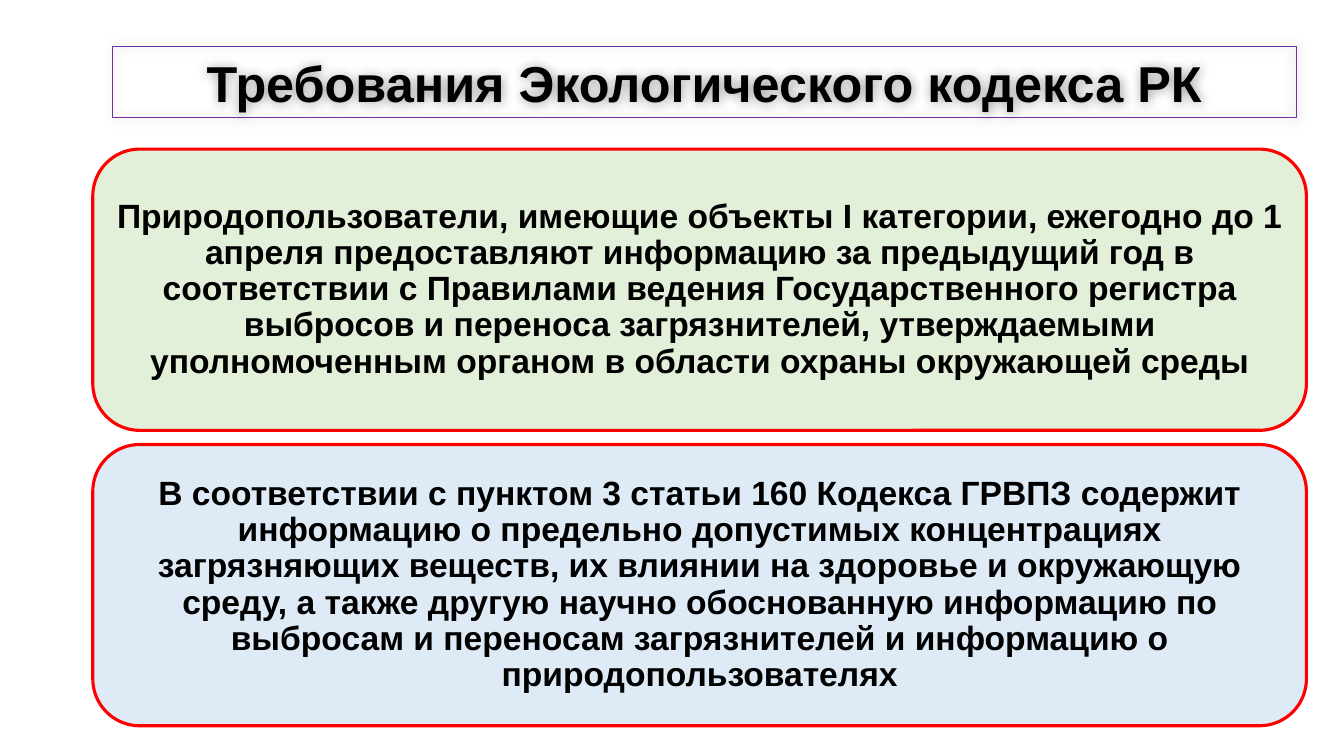
from lxml import etree
from pptx import Presentation
from pptx.dml.color import RGBColor
from pptx.enum.shapes import MSO_SHAPE as Shape
from pptx.enum.text import MSO_ANCHOR as Anchor, PP_ALIGN as Align
from pptx.oxml.ns import qn
from pptx.util import Pt

COLORS = {"text": "000000", "green": "E2F0D9", "blue": "DEEBF7",
          "red": "FF0000", "purple": "7030A0"}

TITLE = "Требования Экологического кодекса РК"
REQUIREMENTS = [
    ("green", "Природопользователи, имеющие объекты I категории, ежегодно до 1 апреля "
              "предоставляют информацию за предыдущий год в соответствии с Правилами "
              "ведения Государственного регистра выбросов и переноса загрязнителей, "
              "утверждаемыми уполномоченным органом в области охраны окружающей среды"),
    ("blue", "В соответствии с пунктом 3 статьи 160 Кодекса ГРВПЗ содержит информацию "
             "о предельно допустимых концентрациях загрязняющих веществ, их влиянии на "
             "здоровье и окружающую среду, а также другую научно обоснованную информацию "
             "по выбросам и переносам загрязнителей и информацию о природопользователях"),
]
PANEL_LEFT, PANEL_TOP, PANEL_WIDTH, PANEL_HEIGHT = 66.3, 106.5, 866.9, 200.9
PANEL_STEP = 211
PANEL_INSET = 9.8


class PageBuilder:
    def __init__(self, page, font="Arial"):
        self.page = page
        self.font = font

    def color(self, name):
        return RGBColor.from_string(COLORS[name])

    def outline(self, kind, left, top, width, height, line, weight, fill=None):
        box = self.page.shapes.add_shape(kind, Pt(left), Pt(top), Pt(width), Pt(height))
        box.shadow.inherit = False
        box.line.color.rgb = self.color(line)
        box.line.width = Pt(weight)
        if fill:
            box.fill.solid()
            box.fill.fore_color.rgb = self.color(fill)
        else:
            box.fill.background()
        return box

    def set_text(self, box, text, size):
        frame = box.text_frame
        frame.word_wrap = True
        frame.vertical_anchor = Anchor.MIDDLE
        para = frame.paragraphs[0]
        para.text = text
        para.alignment = Align.CENTER
        para.font.name = self.font
        para.font.size = Pt(size)
        para.font.bold = True
        para.font.color.rgb = self.color("text")
        return para

    def glow_shadow(self, box, blur, opacity):
        """Give the box a soft shadow centred on its outline."""
        effects = box.element.spPr.find(qn("a:effectLst"))
        shadow = etree.SubElement(effects, qn("a:outerShdw"), blurRad=str(Pt(blur)),
                                  dist="0", dir="0", algn="ctr", rotWithShape="0")
        tint = etree.SubElement(shadow, qn("a:srgbClr"), val=COLORS["text"])
        etree.SubElement(tint, qn("a:alpha"), val=str(opacity * 1000))

    def title(self, text, left, top, width, height):
        box = self.outline(Shape.RECTANGLE, left, top, width, height, "purple", 0.75)
        self.glow_shadow(box, blur=8, opacity=40)
        self.set_text(box, text, 36)

    def panel(self, text, fill, top):
        self.outline(Shape.ROUNDED_RECTANGLE, PANEL_LEFT, top, PANEL_WIDTH,
                     PANEL_HEIGHT, "red", 2.25, fill)
        box = self.page.shapes.add_textbox(
            Pt(PANEL_LEFT + PANEL_INSET), Pt(top + PANEL_INSET),
            Pt(PANEL_WIDTH - 2 * PANEL_INSET), Pt(PANEL_HEIGHT - 2 * PANEL_INSET))
        para = self.set_text(box, text, 24)
        para.line_spacing = 0.9
        para.space_after = Pt(8.4)
        frame = box.text_frame
        frame.margin_left = frame.margin_right = Pt(7)


def main():
    deck = Presentation()
    deck.slide_width, deck.slide_height = Pt(960), Pt(540)
    builder = PageBuilder(deck.slides.add_slide(deck.slide_layouts[6]))
    for index, (fill, text) in enumerate(REQUIREMENTS):
        builder.panel(text, fill, PANEL_TOP + index * PANEL_STEP)
    builder.title(TITLE, 80.6, 33.1, 845.3, 51.1)
    deck.save("out.pptx")


if __name__ == "__main__":
    main()
